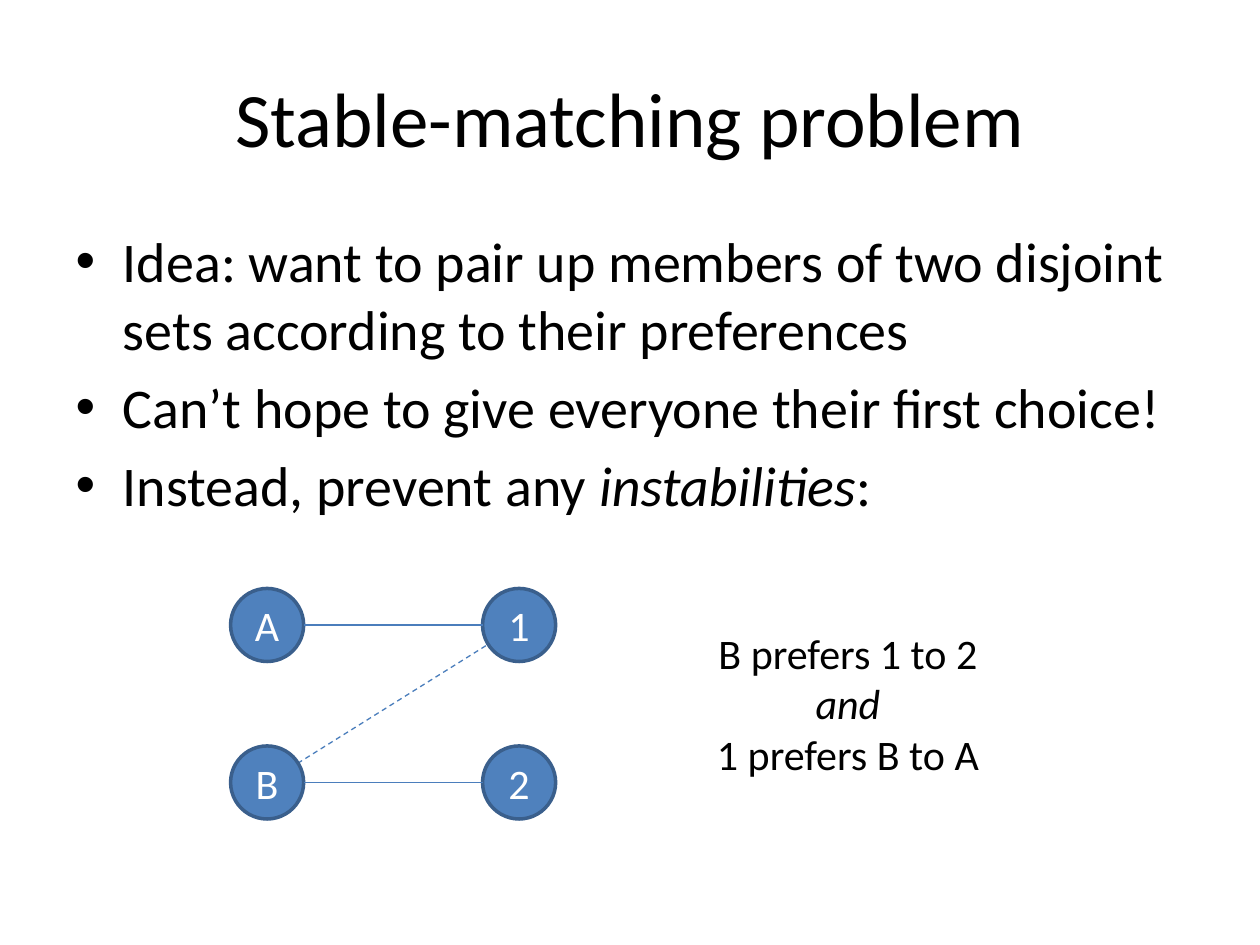
from pptx import Presentation, util as u
from pptx.dml.color import RGBColor
from pptx.enum import dml, shapes, text
from pptx.oxml.ns import qn
from lxml import etree

COLORS = {"text": "000000", "node": "4F81BD", "outline": "3A5F8C",
          "edge": "4B7EBC", "label": "FFFFFF"}
NODE_SIZE = 0.58


def color(name):
    """Return the named colour."""
    return RGBColor.from_string(COLORS[name])


def place(sp, box):
    """Move a shape to a box given in inches."""
    sp.left, sp.top, sp.width, sp.height = map(u.Inches, box)


def format_runs(tf, size, name="text"):
    """Give every run of a text frame the same font."""
    for p in tf.paragraphs:
        for r in p.runs:
            r.font.name, r.font.size = "Calibri", u.Pt(size)
            r.font.color.rgb = color(name)


def add_title(s, box, title):
    """Fill the title placeholder."""
    sp = s.shapes.title
    place(sp, box)
    tf = sp.text_frame
    tf.text = title
    tf.vertical_anchor = text.MSO_ANCHOR.MIDDLE
    tf.paragraphs[0].alignment = text.PP_ALIGN.CENTER
    format_runs(tf, 44)


def add_bullets(s, box, items):
    """Fill the body placeholder; each item is a list of (text, italic) runs."""
    sp = s.placeholders[1]
    place(sp, box)
    tf = sp.text_frame
    for i, item in enumerate(items):
        p = tf.add_paragraph() if i else tf.paragraphs[0]
        for content, italic in item:
            r = p.add_run()
            r.text, r.font.italic = content, italic
    tf.paragraphs[0].space_before = u.Pt(0)
    format_runs(tf, 32)


def add_edge(s, start, end, dashed=False):
    """Draw a thin line between two points."""
    c = s.shapes.add_connector(shapes.MSO_CONNECTOR.STRAIGHT,
                               *map(u.Inches, (*start, *end)))
    c.line.color.rgb, c.line.width = color("edge"), u.Pt(0.75)
    if dashed:
        c.line.dash_style = dml.MSO_LINE.DASH
    etree.SubElement(c._element.spPr, qn("a:effectLst"))


def add_node(s, center, label):
    """Draw a labelled circle around a point."""
    x, y = center
    sp = s.shapes.add_shape(shapes.MSO_SHAPE.OVAL, 0, 0, 0, 0)
    place(sp, (x - NODE_SIZE / 2, y - NODE_SIZE / 2, NODE_SIZE, NODE_SIZE))
    sp.shadow.inherit = False
    sp.fill.solid()
    sp.fill.fore_color.rgb = color("node")
    sp.line.color.rgb, sp.line.width = color("outline"), u.Pt(2)
    tf = sp.text_frame
    tf.margin_left = tf.margin_right = 0
    tf.vertical_anchor = text.MSO_ANCHOR.MIDDLE
    tf.text = label
    tf.paragraphs[0].alignment = text.PP_ALIGN.CENTER
    format_runs(tf, 24, "label")


def add_matching(s, box):
    """Draw two matched pairs and the unstable pair between them."""
    left, top, width, height = box
    half = NODE_SIZE / 2
    x1, x2 = left + half, left + width - half
    y1, y2 = top + half, top + height - half
    add_edge(s, (x1, y2), (x2, y1), dashed=True)
    for y, labels in ((y1, "A1"), (y2, "B2")):
        for x, label in zip((x1, x2), labels):
            add_node(s, (x, y), label)
        add_edge(s, (x1 + half, y), (x2 - half, y))


def add_note(s, box):
    """Write the condition that makes a matching unstable."""
    tf = s.shapes.add_textbox(*map(u.Inches, box)).text_frame
    tf.word_wrap = False
    tf.auto_size = text.MSO_AUTO_SIZE.SHAPE_TO_FIT_TEXT
    tf.text = "B prefers 1 to 2\vand\n1 prefers B to A"
    for p in tf.paragraphs:
        p.alignment = text.PP_ALIGN.CENTER
    format_runs(tf, 24)
    tf.paragraphs[0].runs[1].font.italic = True


def main():
    """Build the slide."""
    prs = Presentation()
    prs.slide_width, prs.slide_height = u.Inches(10), u.Inches(7.5)
    s = prs.slides.add_slide(prs.slide_layouts[1])
    add_title(s, (0.5, 0.3, 9, 1.25), "Stable-matching problem")
    add_bullets(s, (0.5, 1.75, 9, 2.58), [
        [("Idea: want to pair up members of two disjoint sets "
          "according to their preferences", False)],
        [("Can’t hope to give everyone their first choice!", False)],
        [("Instead, prevent any ", False), ("instabilities", True), (":", False)],
    ])
    add_matching(s, (1.83, 4.67, 2.58, 1.83))
    add_note(s, (5.58, 4.93, 2.3, 1.31))
    prs.save("out.pptx")


if __name__ == "__main__":
    main()
